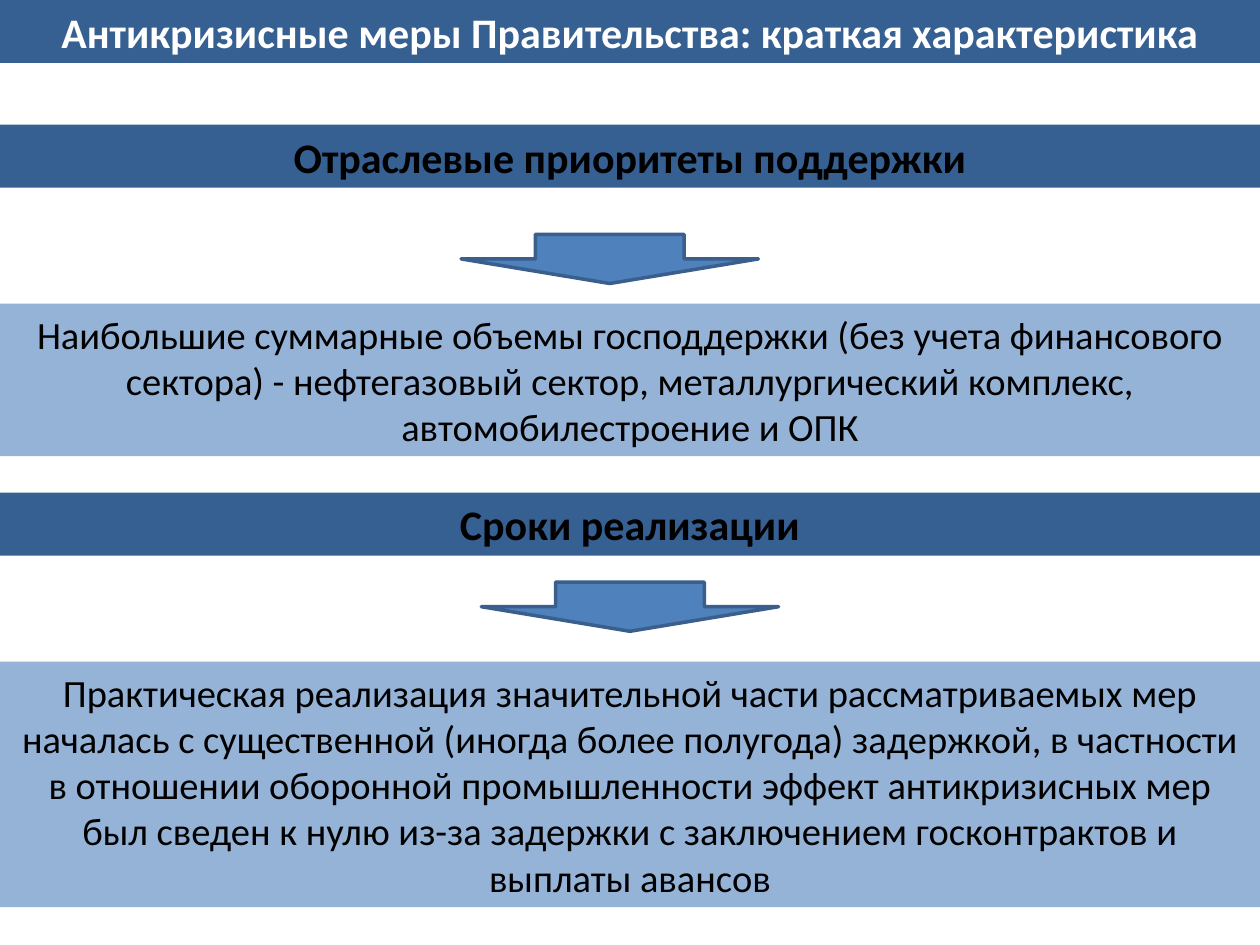
from pptx import Presentation
from pptx.dml.color import RGBColor
from pptx.enum.shapes import MSO_SHAPE
from pptx.enum.text import MSO_ANCHOR, MSO_AUTO_SIZE, PP_ALIGN
from pptx.util import Inches, Pt

RECTANGLE = MSO_SHAPE.RECTANGLE
DOWN_ARROW = MSO_SHAPE.DOWN_ARROW
MIDDLE = MSO_ANCHOR.MIDDLE
NO_AUTOFIT = MSO_AUTO_SIZE.NONE
CENTER = PP_ALIGN.CENTER

TITLE = "Антикризисные меры Правительства: краткая характеристика"
SECTIONS = [
    {
        "heading": "Отраслевые приоритеты поддержки",
        "body": "Наибольшие суммарные объемы господдержки (без учета финансового "
                "сектора) - нефтегазовый сектор, металлургический комплекс, "
                "автомобилестроение и ОПК",
        "heading_top": 0.99, "arrow_left": 3.66, "arrow_top": 1.86,
        "body_top": 2.41, "body_height": 1.21,
    },
    {
        "heading": "Сроки реализации",
        "body": "Практическая реализация значительной части рассматриваемых мер "
                "началась с существенной (иногда более полугода) задержкой, в частности "
                "в отношении оборонной промышленности эффект антикризисных мер "
                "был сведен к нулю из-за задержки с заключением госконтрактов и "
                "выплаты авансов",
        "heading_top": 3.91, "arrow_left": 3.82, "arrow_top": 4.62,
        "body_top": 5.25, "body_height": 1.95,
    },
]

WIDTH, HEIGHT = 10, 7.5
BAR_HEIGHT = HEIGHT / 15
ARROW_WIDTH, ARROW_HEIGHT = 2.36, 0.39
DARK, LIGHT, ARROW_FILL, ARROW_LINE = "376092", "95B3D7", "4F81BD", "3A5F8C"
BLACK, WHITE = "000000", "FFFFFF"


def color(value):
    return RGBColor.from_string(value)


def paint(shape, value):
    shape.fill.solid()
    shape.fill.fore_color.rgb = color(value)


def add_shape(slide, kind, left, top, width, height, fill):
    shape = slide.shapes.add_shape(
        kind, Inches(left), Inches(top), Inches(width), Inches(height))
    shape.shadow.inherit = False
    paint(shape, fill)
    return shape


def write(shape, text, size, text_color, bold):
    frame = shape.text_frame
    frame.text = text
    frame.word_wrap = True
    frame.auto_size = NO_AUTOFIT
    frame.vertical_anchor = MIDDLE
    paragraph = frame.paragraphs[0]
    paragraph.alignment = CENTER
    font = paragraph.font
    font.name = "Calibri"
    font.size = Pt(size)
    font.bold = bold
    font.color.rgb = color(text_color)


def add_band(slide, top, height, fill, text, size, bold):
    band = add_shape(slide, RECTANGLE, 0, top, WIDTH, height, fill)
    band.line.fill.background()
    write(band, text, size, BLACK, bold)


def add_section(slide, section):
    add_band(slide, section["heading_top"], BAR_HEIGHT, DARK,
             section["heading"], 24, True)
    add_band(slide, section["body_top"], section["body_height"], LIGHT,
             section["body"], 22, False)
    arrow = add_shape(slide, DOWN_ARROW, section["arrow_left"],
                      section["arrow_top"], ARROW_WIDTH, ARROW_HEIGHT, ARROW_FILL)
    arrow.line.color.rgb = color(ARROW_LINE)
    arrow.line.width = Pt(2)


def main():
    presentation = Presentation()
    presentation.slide_width = Inches(WIDTH)
    presentation.slide_height = Inches(HEIGHT)
    slide = presentation.slides.add_slide(presentation.slide_layouts[5])

    title = slide.shapes.title
    title.left, title.top = 0, 0
    title.width, title.height = Inches(WIDTH), Inches(BAR_HEIGHT)
    paint(title, DARK)
    write(title, TITLE, 24, WHITE, True)

    for section in SECTIONS:
        add_section(slide, section)
    presentation.save("out.pptx")


if __name__ == "__main__":
    main()
